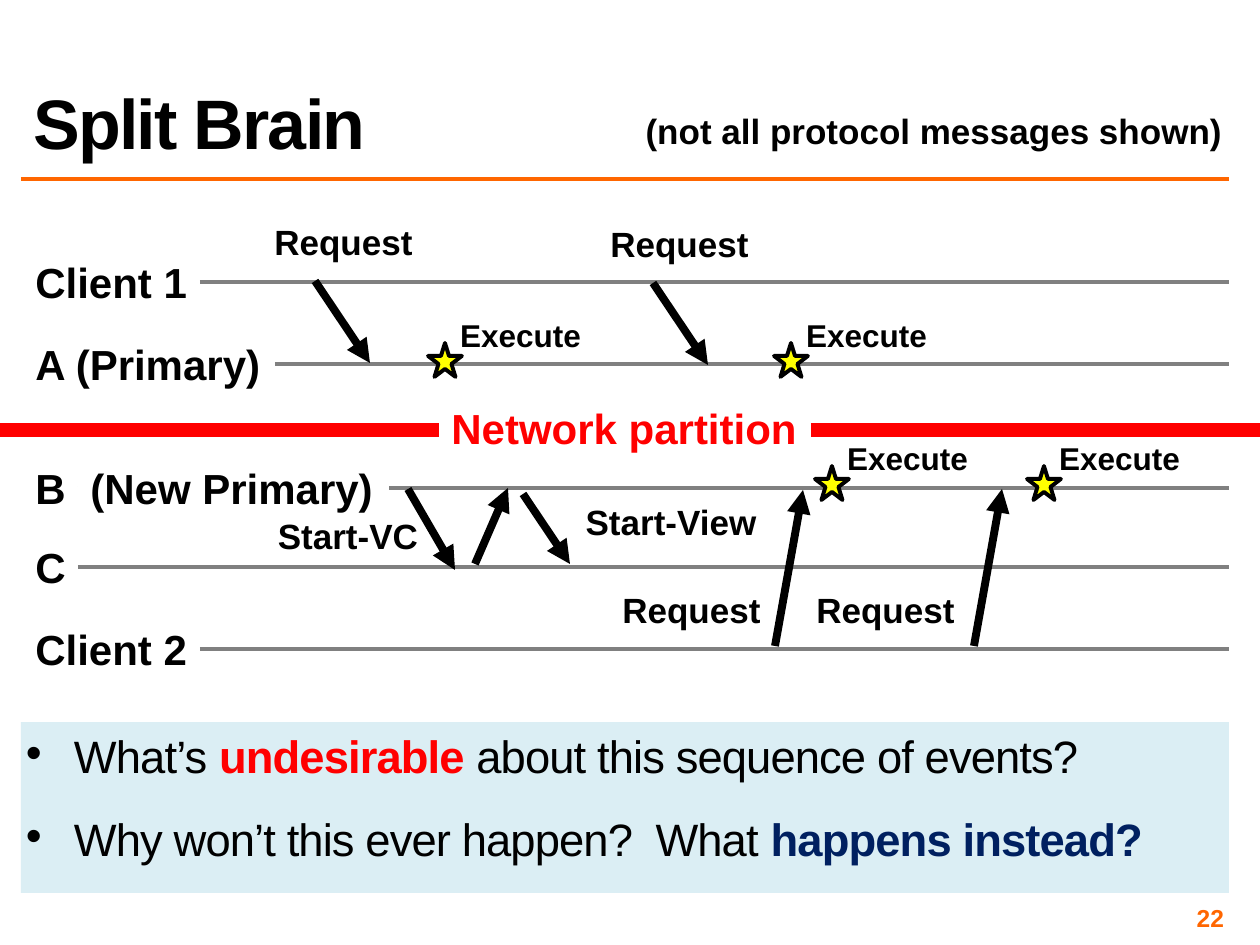
from dataclasses import dataclass

from lxml import etree
from pptx import Presentation
from pptx.dml.color import RGBColor
from pptx.enum import shapes, text
from pptx.oxml.ns import qn
from pptx.util import Pt

SCALE = 914400 / 126  # EMU per px
BLACK, RED, ORANGE, GRAY = "000000", "FF0000", "FF6600", "808080"
LEFT, RIGHT = 21, 1229


@dataclass
class Lane:
    name: str
    y: int
    start: int  # where the line begins


@dataclass
class Arrow:
    x1: int
    y1: int
    x2: int
    y2: int


@dataclass
class Label:
    words: str
    x: int
    y: int
    w: int


LANES = [
    Lane("Client 1", 282, 200),
    Lane("A (Primary)", 364, 275),
    Lane("B", 488, 78),
    Lane("C", 567, 78),
    Lane("Client 2", 649, 200),
]
ARROWS = [
    Arrow(315, 281, 370, 363),
    Arrow(653, 283, 708, 365),
    Arrow(408, 489, 455, 570),
    Arrow(475, 564, 508, 488),
    Arrow(523, 494, 570, 564),
    Arrow(775, 646, 803, 490),
    Arrow(974, 646, 1002, 489),
]
LABELS = [
    Label("Request", 261, 214, 165),
    Label("Request", 597, 216, 165),
    Label("Start-VC", 265, 508, 166),
    Label("Start-View", 572, 494, 198),
    Label("Request", 609, 582, 165),
    Label("Request", 803, 582, 165),
    Label("(not all protocol messages shown)", 631, 103, 606),
]
STARS = [(428, 343), (774, 343), (815, 466), (1027, 466)]
POINTS = [
    [("What’s ", BLACK, False), ("undesirable ", RED, True),
     ("about this sequence of events?", BLACK, False)],
    [("Why won’t this ever happen?  What ", BLACK, False),
     ("happens instead?", "002060", True)],
]

deck = Presentation()
deck.slide_width, deck.slide_height = round(1260 * SCALE), round(945 * SCALE)
slide = deck.slides.add_slide(deck.slide_layouts[6])


def px(n: int) -> int:
    return round(n * SCALE)


def hue(code: str) -> RGBColor:
    return RGBColor.from_string(code)


def style(run, size: float, color: str, bold: bool, track: int = 0) -> None:
    """Set the font of a run; track is letter spacing in 1/100 pt."""
    font = run.font
    font.name, font.size, font.bold = "Arial", Pt(size), bold
    font.color.rgb = hue(color)
    if track:
        run._r.get_or_add_rPr().set("spc", str(track))


def write(words: str, x: int, y: int, w: int, h: int, *, size: float = 24,
          color: str = BLACK, align: str = "LEFT", anchor: str = "TOP",
          track: int = 0, fill: str = ""):
    box = slide.shapes.add_textbox(px(x), px(y), px(w), px(h))
    if fill:
        box.fill.solid()
        box.fill.fore_color.rgb = hue(fill)
    frame = box.text_frame
    frame.word_wrap = False
    frame.vertical_anchor = getattr(text.MSO_ANCHOR, anchor)
    para = frame.paragraphs[0]
    para.alignment = getattr(text.PP_ALIGN, align)
    run = para.add_run()
    run.text = words
    style(run, size, color, True, track)
    return box


def rule(x1: int, y1: int, x2: int, y2: int, color: str, width: float,
         head: bool = False) -> None:
    line = slide.shapes.add_connector(
        shapes.MSO_CONNECTOR.STRAIGHT, px(x1), px(y1), px(x2), px(y2))
    line.line.color.rgb = hue(color)
    line.line.width = Pt(width)
    if head:
        etree.SubElement(line.line._get_or_add_ln(), qn("a:tailEnd"),
                         type="triangle")
    etree.SubElement(line._element.spPr, qn("a:effectLst"))


def star(x: int, y: int) -> None:
    write("Execute", x + 19, y - 33, 147, 50, size=18, align="CENTER")
    mark = slide.shapes.add_shape(
        shapes.MSO_SHAPE.STAR_5_POINT, px(x), px(y), px(34), px(34))
    mark.shadow.inherit = False
    mark.fill.solid()
    mark.fill.fore_color.rgb = hue("FFFF00")
    mark.line.color.rgb = hue(BLACK)
    mark.line.width = Pt(2.25)


def panel() -> None:
    box = slide.shapes.add_textbox(px(LEFT), px(722), px(RIGHT - LEFT), px(171))
    box.fill.solid()
    box.fill.fore_color.rgb = hue("DBEEF4")
    frame = box.text_frame
    frame.word_wrap = True
    frame.margin_left = frame.margin_right = px(5)
    frame.margin_top, frame.margin_bottom = px(25), px(13)
    for i, parts in enumerate(POINTS):
        para = frame.add_paragraph() if i else frame.paragraphs[0]
        para.line_spacing = 0.6
        para.space_before = Pt(29 if i else 5)
        props = para._p.get_or_add_pPr()
        props.set("marL", str(px(48)))
        props.set("indent", str(px(-48)))
        etree.SubElement(props, qn("a:buFont"), typeface="Arial")
        etree.SubElement(props, qn("a:buChar"), char="•")
        for words, color, bold in parts:
            run = para.add_run()
            run.text = words
            style(run, 25.9, color, bold, -50)


# Header
rule(LEFT, 179, RIGHT, 179, ORANGE, 2)
title = write("Split Brain", LEFT, 21, RIGHT - LEFT, 148, size=40,
              anchor="BOTTOM", track=-100)
title.text_frame.paragraphs[0].line_spacing = 0.8

# Lanes, with the new role set over the line of B
for lane in LANES:
    rule(lane.start, lane.y, RIGHT, lane.y, GRAY, 2.25)
    write(lane.name, 23, lane.y - 32, lane.start - 22, 63)
write("(New Primary)", 78, 456, 311, 63, fill="FFFFFF")

# Partition between A and B
write("Network partition", 437, 396, 374, 63, color=RED, align="CENTER")
rule(0, 430, 439, 430, RED, 7.5)
rule(811, 430, 1260, 430, RED, 7.5)

# Messages and executions
for a in ARROWS:
    rule(a.x1, a.y1, a.x2, a.y2, BLACK, 4.5, head=True)
for t in LABELS:
    write(t.words, t.x, t.y, t.w, 55, size=20, align="CENTER")
for x, y in STARS:
    star(x, y)

# Questions and page number
panel()
page = write("22", 935, 903, 294, 29, size=14, color=ORANGE, align="RIGHT",
             anchor="MIDDLE")
page.text_frame.word_wrap = True
page.text_frame.margin_left = page.text_frame.margin_right = px(5)

deck.save("out.pptx")
